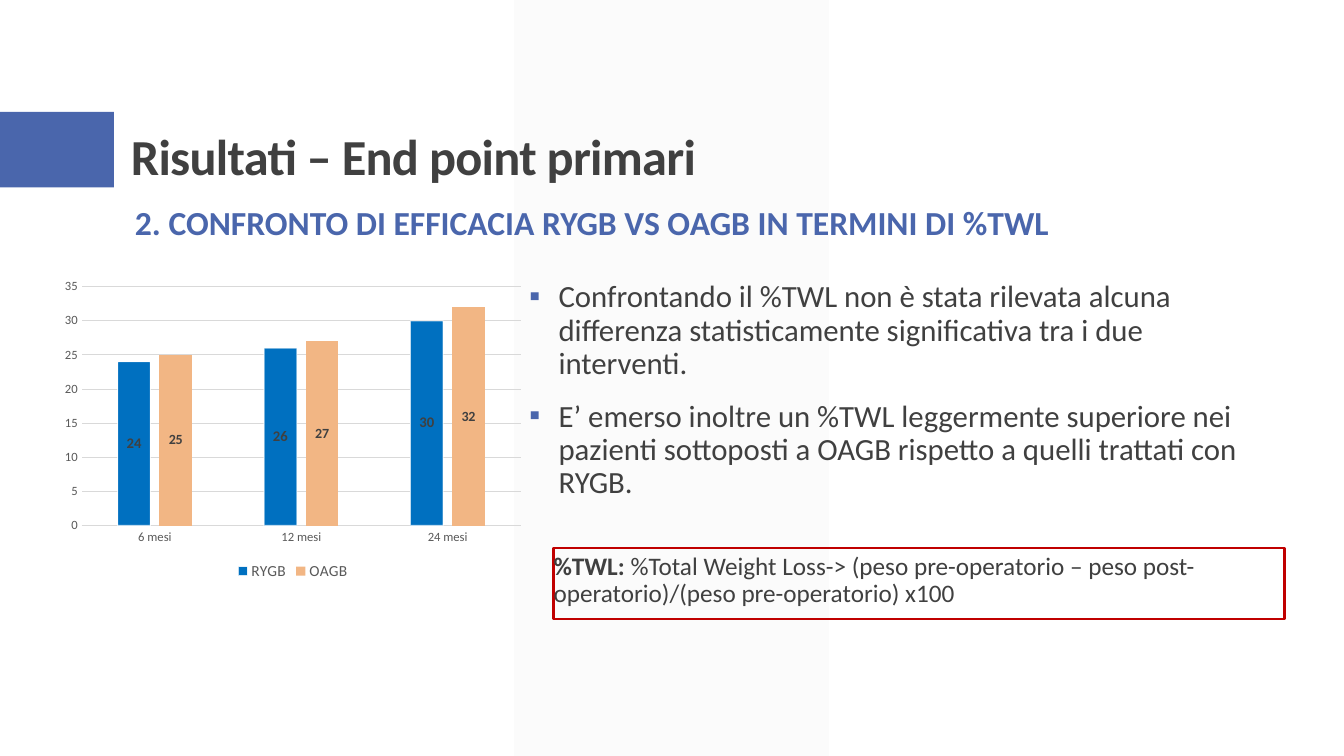
from lxml.etree import SubElement
from pptx import Presentation
from pptx.chart.data import CategoryChartData
from pptx.dml.color import RGBColor
from pptx.enum.chart import XL_CHART_TYPE, XL_LABEL_POSITION, XL_LEGEND_POSITION, XL_TICK_MARK
from pptx.enum.shapes import MSO_SHAPE
from pptx.enum.text import MSO_ANCHOR, PP_ALIGN
from pptx.oxml.ns import qn
from pptx.util import Pt

PX = 9144
FONT = "Calibri"
WHITE = RGBColor(0xFF, 0xFF, 0xFF)
BAND = RGBColor(0xF2, 0xF2, 0xF2)
INDIGO = RGBColor(0x4A, 0x66, 0xAC)
INK = RGBColor(0x40, 0x40, 0x40)
AXIS_INK = RGBColor(0x59, 0x59, 0x59)
GRID = RGBColor(0xD9, 0xD9, 0xD9)
RED = RGBColor(0xC0, 0x00, 0x00)
BLUE = RGBColor(0x00, 0x70, 0xC0)
PEACH = RGBColor(0xF2, 0xB6, 0x84)


class SlideBuilder:
    """Adds styled elements, placed in px, to one slide."""

    def __init__(self, slide):
        self.slide = slide

    def place(self, *lengths):
        return [length * PX for length in lengths]

    def style(self, font, size, color, bold=False):
        font.name, font.size, font.bold = FONT, Pt(size), bold
        font.color.rgb = color

    def fade(self, element, percent):
        color = next(element.iter(qn("a:srgbClr")))
        SubElement(color, qn("a:alpha"), val=str(percent * 1000))

    def shape(self, kind, box, fill=None, line=None, opacity=100):
        shape = self.slide.shapes.add_shape(kind, *self.place(*box))
        shape.shadow.inherit = False
        if fill is None:
            shape.fill.background()
        else:
            shape.fill.solid()
            shape.fill.fore_color.rgb = fill
            if opacity < 100:
                self.fade(shape._element.spPr, opacity)
        if line is None:
            shape.line.fill.background()
        else:
            shape.line.color.rgb = line
            shape.line.width = Pt(1.5)
        return shape

    def text_box(self, box):
        return self.slide.shapes.add_textbox(*self.place(*box))

    def add_text(self, shape, paragraphs, size, color=INK, anchor=MSO_ANCHOR.TOP,
                 insets=(0, 5), spacing=0.9, bullet=None, tracking=None):
        frame = shape.text_frame
        frame.word_wrap = True
        frame.vertical_anchor = anchor
        frame.margin_left = frame.margin_right = insets[0] * PX
        frame.margin_top = frame.margin_bottom = insets[1] * PX
        for index, runs in enumerate(paragraphs):
            paragraph = frame.add_paragraph() if index else frame.paragraphs[0]
            paragraph.alignment = PP_ALIGN.LEFT
            paragraph.line_spacing = spacing
            if bullet:
                self.bullet(paragraph, bullet)
            for text, bold in runs:
                run = paragraph.add_run()
                run.text = text
                self.style(run.font, size, color, bold)
                if tracking:
                    run.font._element.set("spc", str(tracking))

    def bullet(self, paragraph, symbol):
        paragraph.space_before, paragraph.space_after = Pt(12), Pt(2)
        properties = paragraph._p.get_or_add_pPr()
        properties.set("marL", str(29 * PX))
        properties.set("indent", str(-29 * PX))
        color = SubElement(properties, qn("a:buClr"))
        SubElement(color, qn("a:srgbClr"), val=str(INDIGO))
        SubElement(properties, qn("a:buFont"), typeface=FONT)
        SubElement(properties, qn("a:buChar"), char=symbol)

    def column_chart(self, box, categories, series_styles):
        data = CategoryChartData()
        data.categories = categories
        for name, values, *_ in series_styles:
            data.add_series(name, values)
        chart = self.slide.shapes.add_chart(
            XL_CHART_TYPE.COLUMN_CLUSTERED, *self.place(*box), data).chart
        self.style(chart.font, 10, AXIS_INK)
        chart.has_title = False
        chart.has_legend = True
        chart.legend.position = XL_LEGEND_POSITION.BOTTOM
        chart.legend.include_in_layout = False
        self.style(chart.legend.font, 11, AXIS_INK)
        for axis in (chart.category_axis, chart.value_axis):
            axis.major_tick_mark = axis.minor_tick_mark = XL_TICK_MARK.NONE
            self.style(axis.tick_labels.font, 9, AXIS_INK)
        value_axis = chart.value_axis
        value_axis.minimum_scale, value_axis.maximum_scale, value_axis.major_unit = 0, 35, 5
        value_axis.format.line.fill.background()
        for line in (chart.category_axis.format.line, value_axis.major_gridlines.format.line):
            line.color.rgb = GRID
            line.width = Pt(0.75)
        plot = chart.plots[0]
        plot.gap_width, plot.overlap, plot.vary_by_categories = 219, -27, False
        for series, (_, _, color, label_size, outline) in zip(plot.series, series_styles):
            series.format.fill.solid()
            series.format.fill.fore_color.rgb = color
            if outline:
                series.format.line.color.rgb = outline
                series.format.line.width = Pt(0.75)
                self.fade(next(series._element.iter(qn("a:ln"))), 74)
            labels = series.data_labels
            labels.show_value = True
            labels.position = XL_LABEL_POSITION.CENTER
            self.style(labels.font, label_size, INK, True)


def main():
    presentation = Presentation()
    presentation.slide_width, presentation.slide_height = 1333 * PX, 750 * PX
    builder = SlideBuilder(presentation.slides.add_slide(presentation.slide_layouts[6]))

    band = builder.shape(MSO_SHAPE.PARALLELOGRAM, (510, 0, 312, 750), fill=BAND, opacity=30)
    band.adjustments[0] = 0
    builder.shape(MSO_SHAPE.RECTANGLE, (0, 111, 113, 75), fill=INDIGO)

    title = builder.text_box((120, 31, 1100, 159))
    builder.add_text(title, [[("Risultati – End point primari", True)]], 36,
                     anchor=MSO_ANCHOR.BOTTOM, insets=(10, 5), tracking=-50)
    subtitle = builder.text_box((124, 200, 1005, 81))
    builder.add_text(subtitle, [[("2. CONFRONTO DI EFFICACIA RYGB VS OAGB IN TERMINI DI %TWL", True)]],
                     24, INDIGO, insets=(10, 0), spacing=1.0)

    findings = builder.text_box((525, 274, 722, 318))
    builder.add_text(findings, [
        [("Confrontando il %TWL non è stata rilevata alcuna differenza statisticamente "
          "significativa tra i due interventi.", False)],
        [("E’ emerso inoltre un %TWL leggermente superiore nei pazienti sottoposti a OAGB "
          "rispetto a quelli trattati con RYGB.", False)],
    ], 22, bullet="▪")

    builder.column_chart((55, 271, 471, 309), ["6 mesi", "12 mesi", "24 mesi"], [
        ("RYGB", (24, 26, 30), BLUE, 10.5, WHITE),
        ("OAGB", (25, 27, 32), PEACH, 10, None),
    ])

    definition = builder.shape(MSO_SHAPE.RECTANGLE, (549, 544, 725, 70), line=RED)
    builder.add_text(definition, [[
        ("%TWL: ", True),
        ("%Total Weight Loss-> (peso pre-operatorio – peso post-operatorio)"
         "/(peso pre-operatorio) x100", False),
    ]], 18)

    presentation.save("out.pptx")


if __name__ == "__main__":
    main()
